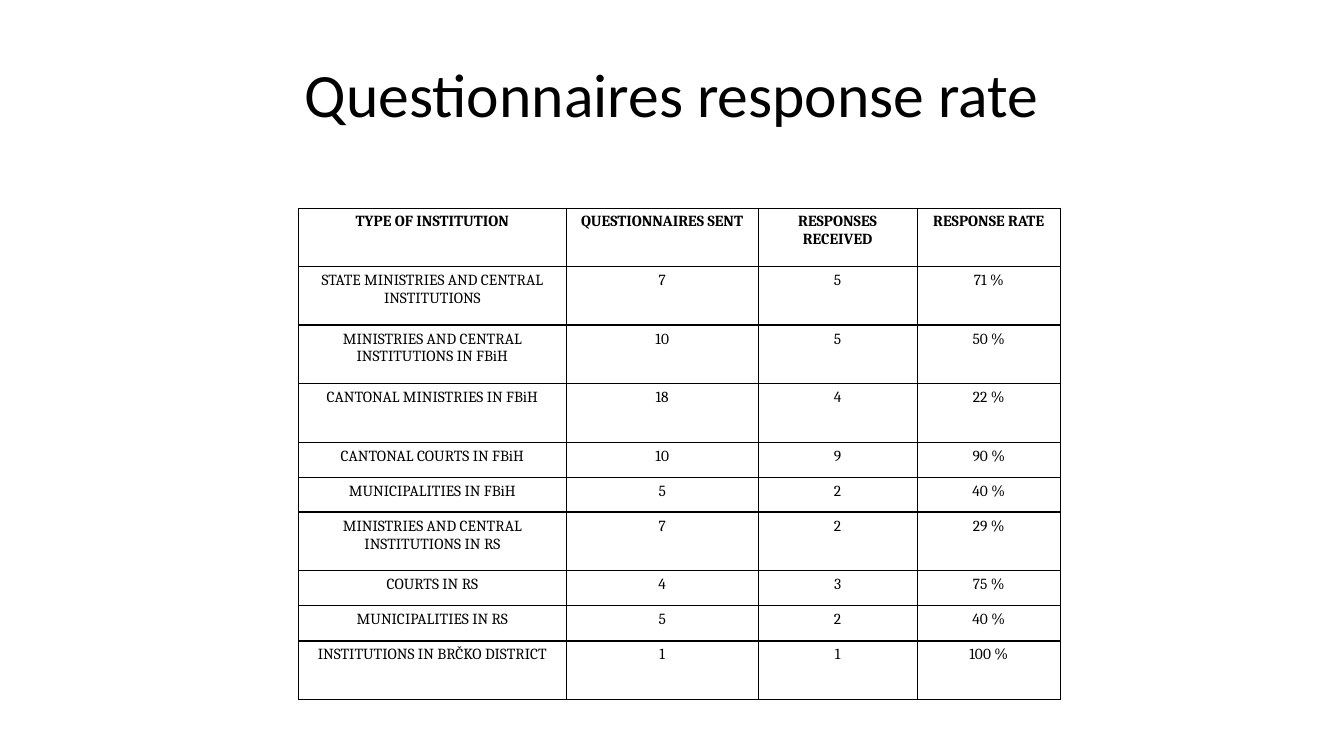
from lxml import etree
from pptx import Presentation
from pptx.dml.color import RGBColor
from pptx.enum.text import MSO_ANCHOR, PP_ALIGN
from pptx.oxml.ns import qn
from pptx.util import Inches, Pt

CENTER = PP_ALIGN.CENTER
MIDDLE = MSO_ANCHOR.MIDDLE
TOP = MSO_ANCHOR.TOP

COLORS = {"text": "000000", "border": "000000", "background": "FFFFFF"}
TITLE_FONT = "Calibri"
TABLE_FONT = "Cambria"
THIN, THICK = 0.5, 1.5

# Lengths are percentages of the slide's width or height.
COLUMN_WIDTHS = [19.95, 14.25, 11.85, 10.65]
TALL, SHORT = 7.75, 4.63

HEADER = ["TYPE OF INSTITUTION", "QUESTIONNAIRES SENT", "RESPONSES RECEIVED", "RESPONSE RATE"]
# Each row: height, institution, sent, received, rate
RESPONSES = [
    (TALL, "STATE MINISTRIES AND CENTRAL INSTITUTIONS", "7", "5", "71 %"),
    (TALL, "MINISTRIES AND CENTRAL INSTITUTIONS IN FBiH", "10", "5", "50 %"),
    (TALL, "CANTONAL MINISTRIES IN FBiH", "18", "4", "22 %"),
    (SHORT, "CANTONAL COURTS IN FBiH", "10", "9", "90 %"),
    (SHORT, "MUNICIPALITIES IN FBiH", "5", "2", "40 %"),
    (TALL, "MINISTRIES AND CENTRAL INSTITUTIONS IN RS", "7", "2", "29 %"),
    (SHORT, "COURTS IN RS", "4", "3", "75 %"),
    (SHORT, "MUNICIPALITIES IN RS", "5", "2", "40 %"),
    (TALL, "INSTITUTIONS IN BRČKO DISTRICT", "1", "1", "100 %"),
]
ROWS_BEFORE_THICK_LINE = {1, 5, 8}


class SlideBuilder:
    def __init__(self, presentation):
        self.width = presentation.slide_width
        self.height = presentation.slide_height
        self.slide = presentation.slides.add_slide(presentation.slide_layouts[5])
        background = self.slide.background.fill
        background.solid()
        background.fore_color.rgb = RGBColor.from_string(COLORS["background"])

    def across(self, percent):
        return round(self.width * percent / 100)

    def down(self, percent):
        return round(self.height * percent / 100)

    def style_paragraph(self, paragraph, font_name, size, bold=False):
        paragraph.alignment = CENTER
        for run in paragraph.runs:
            run.font.name = font_name
            run.font.size = Pt(size)
            run.font.bold = bold
            run.font.color.rgb = RGBColor.from_string(COLORS["text"])

    def title(self, text, left, top, width, height):
        shape = self.slide.shapes.title
        shape.left, shape.top = self.across(left), self.down(top)
        shape.width, shape.height = self.across(width), self.down(height)
        shape.text_frame.text = text
        shape.text_frame.vertical_anchor = MIDDLE
        self.style_paragraph(shape.text_frame.paragraphs[0], TITLE_FONT, 44)

    def border(self, cell, top, bottom):
        properties = cell._tc.get_or_add_tcPr()
        sides = {"lnL": THIN, "lnR": THIN, "lnT": top, "lnB": bottom}
        for position, (side, points) in enumerate(sides.items()):
            line = etree.Element(qn(f"a:{side}"), w=str(Pt(points)))
            fill = etree.SubElement(line, qn("a:solidFill"))
            etree.SubElement(fill, qn("a:srgbClr"), val=COLORS["border"])
            properties.insert(position, line)

    def cell(self, cell, text, bold):
        cell.text_frame.text = text
        cell.vertical_anchor = TOP
        cell.margin_left = cell.margin_right = Inches(0.07)
        cell.margin_top = cell.margin_bottom = Inches(0.05)
        cell.fill.background()
        paragraph = cell.text_frame.paragraphs[0]
        paragraph.space_after = Pt(10)
        self.style_paragraph(paragraph, TABLE_FONT, 11, bold)

    def table(self, rows, heights, left, top):
        table = self.slide.shapes.add_table(
            len(rows), len(COLUMN_WIDTHS), self.across(left), self.down(top),
            self.across(sum(COLUMN_WIDTHS)), self.down(sum(heights))).table
        table.first_row = table.horz_banding = False
        for column, width in zip(table.columns, COLUMN_WIDTHS):
            column.width = self.across(width)
        for index, (texts, height) in enumerate(zip(rows, heights)):
            table.rows[index].height = self.down(height)
            above = THICK if index - 1 in ROWS_BEFORE_THICK_LINE else THIN
            below = THICK if index in ROWS_BEFORE_THICK_LINE else THIN
            for cell, text in zip(table.rows[index].cells, texts):
                self.cell(cell, text, bold=index == 0)
                self.border(cell, above, below)


def main():
    presentation = Presentation()
    presentation.slide_width = Inches(13.33)
    presentation.slide_height = Inches(7.5)
    builder = SlideBuilder(presentation)
    builder.title("Questionnaires response rate", 5, 4, 90, 16.67)
    rows = [HEADER] + [texts for _, *texts in RESPONSES]
    heights = [TALL] + [height for height, *_ in RESPONSES]
    builder.table(rows, heights, 22.2, 27.5)
    presentation.save("out.pptx")


if __name__ == "__main__":
    main()
